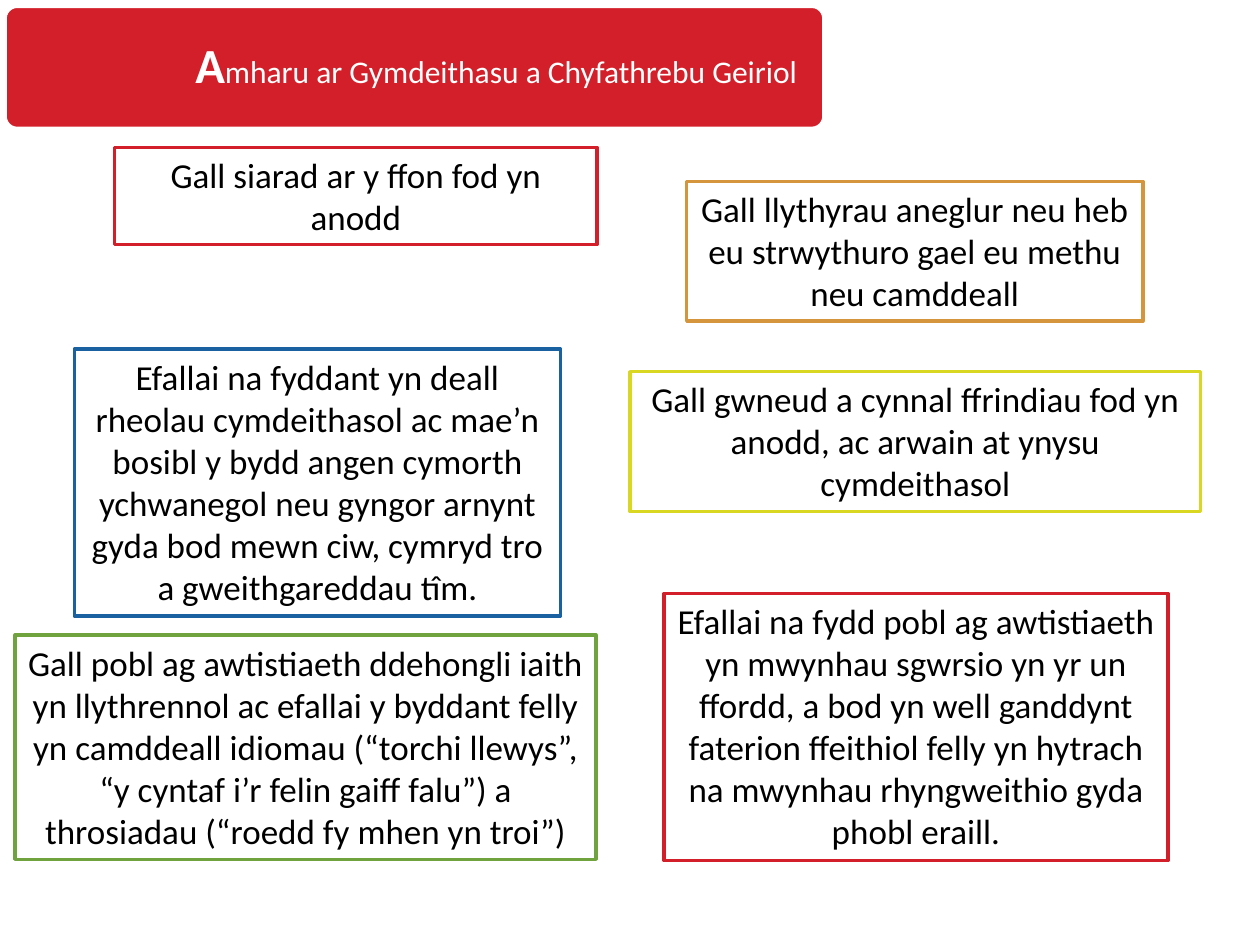
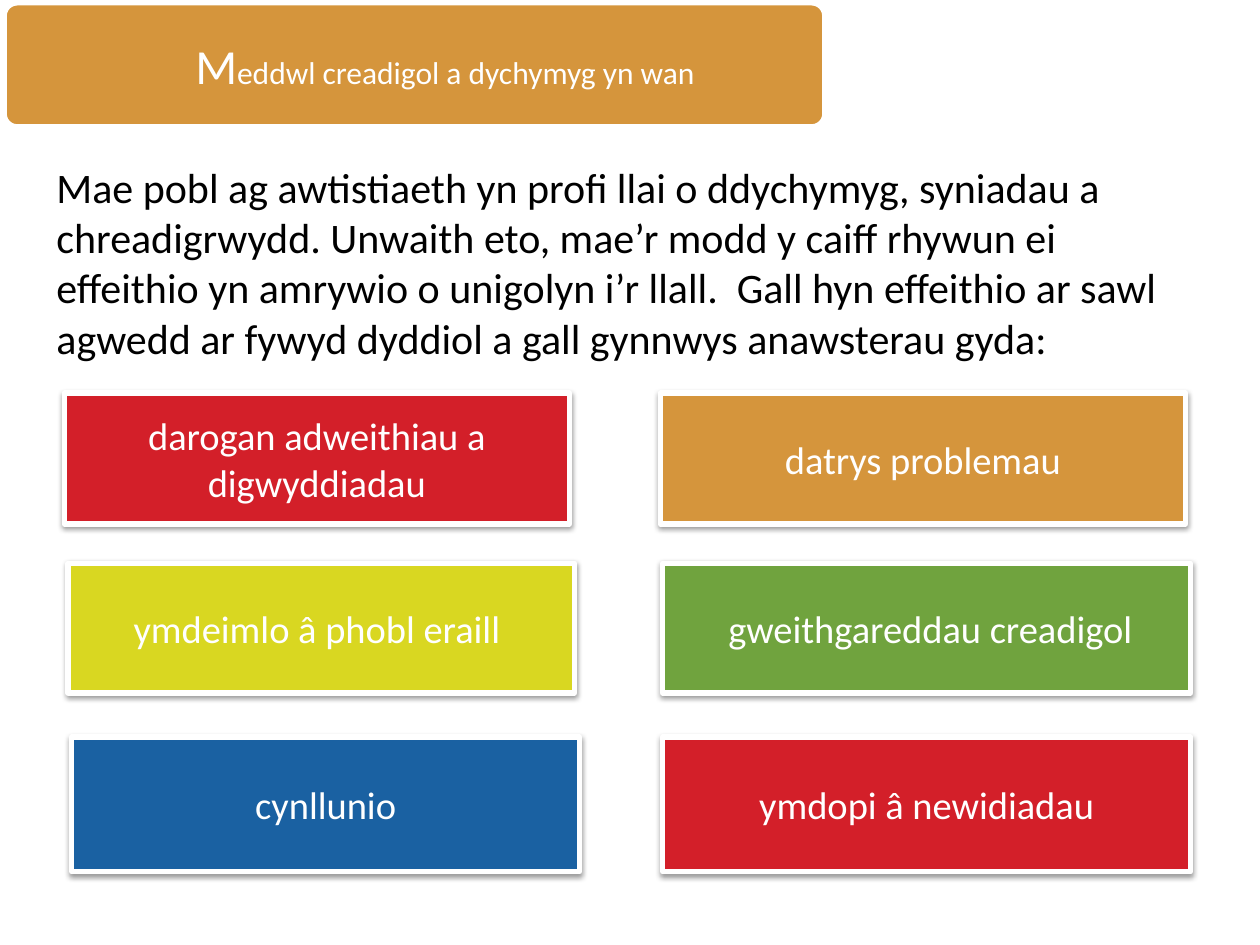
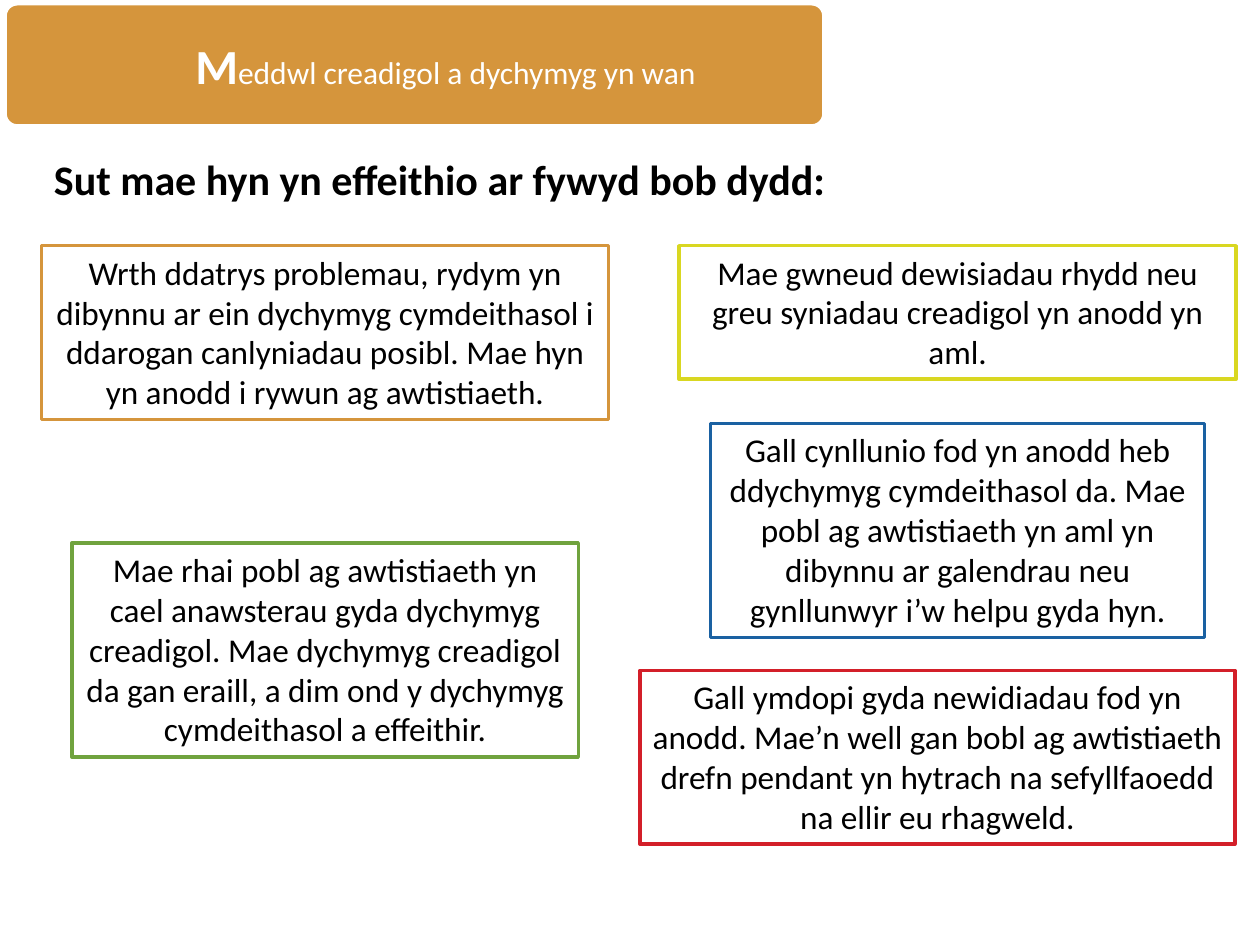
import dataclasses

import lxml.etree
import pptx
import pptx.dml.color
import pptx.enum.shapes
import pptx.enum.text
import pptx.oxml.ns
import pptx.util

Inches = pptx.util.Inches
Pt = pptx.util.Pt
ALIGN = pptx.enum.text.PP_ALIGN
ANCHOR = pptx.enum.text.MSO_ANCHOR
FIT = pptx.enum.text.MSO_AUTO_SIZE
SHAPE = pptx.enum.shapes.MSO_SHAPE


@dataclasses.dataclass(frozen=True)
class Theme:
    red: str = "D31F29"
    orange: str = "D5953C"
    yellow: str = "D9D721"
    green: str = "70A33E"
    blue: str = "1A61A2"
    white: str = "FFFFFF"
    black: str = "000000"
    font: str = "Calibri"
    initial: int = 28
    title: int = 18
    lead: int = 24
    tile: int = 22
    social_note: int = 20
    creative_note: int = 19


@dataclasses.dataclass(frozen=True)
class Box:
    left: float
    top: float
    width: float
    height: float

    def lengths(self):
        return [Inches(side) for side in (self.left, self.top, self.width, self.height)]


THEME = Theme()
CREATIVE_TITLE = "Meddwl creadigol a dychymyg yn wan"


def rgb(colour):
    return pptx.dml.color.RGBColor.from_string(colour)


def style_run(run, size, colour, bold=False):
    run.font.name = THEME.font
    run.font.size = Pt(size)
    run.font.color.rgb = rgb(colour)
    run.font.bold = bold


def write(frame, words, size, colour, align=ALIGN.LEFT, bold=False):
    frame.text = words
    frame.word_wrap = True
    paragraph = frame.paragraphs[0]
    paragraph.alignment = align
    style_run(paragraph.runs[0], size, colour, bold)


def add_panel(slide, box, kind, fill, outline, outline_width):
    panel = slide.shapes.add_shape(kind, *box.lengths())
    panel.shadow.inherit = False
    panel.fill.solid()
    panel.fill.fore_color.rgb = rgb(fill)
    panel.line.color.rgb = rgb(outline)
    panel.line.width = Pt(outline_width)
    return panel


def cast_shadow(panel):
    """Fill the panel's empty effect list with a soft shadow straight below."""
    qn = pptx.oxml.ns.qn
    effects = panel.element.spPr.find(qn("a:effectLst"))
    shadow = lxml.etree.SubElement(
        effects, qn("a:outerShdw"), blurRad=str(Pt(3.1)), dist=str(Pt(1.6)),
        dir="5400000", rotWithShape="0")
    tint = lxml.etree.SubElement(shadow, qn("a:srgbClr"), val=THEME.black)
    lxml.etree.SubElement(tint, qn("a:alpha"), val="38000")


def title_band(slide, box, title, colour, bold_initial=True, line_spacing=1.0):
    """Rounded band whose title opens with a large initial."""
    band = add_panel(slide, box, SHAPE.ROUNDED_RECTANGLE, colour, THEME.white, 2)
    band.adjustments[0] = 0.1

    indent = 1.39
    label = Box(box.left + indent, box.top, box.width - indent, box.height)
    frame = slide.shapes.add_textbox(*label.lengths()).text_frame
    frame.margin_left = frame.margin_right = Inches(0.12)
    frame.margin_top = frame.margin_bottom = Inches(0.12)
    frame.vertical_anchor = ANCHOR.MIDDLE
    write(frame, title[0], THEME.initial, THEME.white, bold=bold_initial)
    paragraph = frame.paragraphs[0]
    paragraph.line_spacing = line_spacing
    rest = paragraph.add_run()
    rest.text = title[1:]
    style_run(rest, THEME.title, THEME.white)


def lead_text(slide, box, words, bold=False, wrap=True):
    frame = slide.shapes.add_textbox(*box.lengths()).text_frame
    write(frame, words, THEME.lead, THEME.black, bold=bold)
    frame.word_wrap = wrap
    frame.auto_size = FIT.SHAPE_TO_FIT_TEXT


def note(slide, box, words, colour, size):
    """White box with a coloured outline and centred text."""
    panel = add_panel(slide, box, SHAPE.RECTANGLE, THEME.white, colour, 2)
    frame = panel.text_frame
    write(frame, words, size, THEME.black, ALIGN.CENTER)
    frame.vertical_anchor = ANCHOR.TOP
    frame.auto_size = FIT.SHAPE_TO_FIT_TEXT


def tile(slide, box, words, colour, indent=None):
    """Coloured box with a shadow; indented text is set from the left."""
    panel = add_panel(slide, box, SHAPE.RECTANGLE, colour, THEME.white, 3)
    cast_shadow(panel)
    frame = panel.text_frame
    frame.vertical_anchor = ANCHOR.MIDDLE
    if indent:
        frame.margin_left = Inches(indent)
    write(frame, words, THEME.tile, THEME.white, ALIGN.LEFT if indent else ALIGN.CENTER)


def social_slide(slide):
    notes = [
        (Box(0.59, 2.77, 3.86, 2.12), THEME.blue,
         "Efallai na fyddant yn deall rheolau cymdeithasol ac mae’n bosibl y bydd angen "
         "cymorth ychwanegol neu gyngor arnynt gyda bod mewn ciw, cymryd tro a "
         "gweithgareddau tîm."),
        (Box(0.12, 5.04, 4.61, 1.78), THEME.green,
         "Gall pobl ag awtistiaeth ddehongli iaith yn llythrennol ac efallai y byddant "
         "felly yn camddeall idiomau (“torchi llewys”, “y cyntaf i’r felin gaiff falu”) "
         "a throsiadau (“roedd fy mhen yn troi”)"),
        (Box(0.91, 1.17, 3.83, 0.77), THEME.red,
         "Gall siarad ar y ffon fod yn anodd"),
        (Box(5.45, 1.44, 3.62, 1.11), THEME.orange,
         "Gall llythyrau aneglur neu heb eu strwythuro gael eu methu neu camddeall"),
        (Box(5, 2.95, 4.53, 1.11), THEME.yellow,
         "Gall gwneud a cynnal ffrindiau fod yn anodd, ac arwain at ynysu cymdeithasol"),
        (Box(5.27, 4.71, 4, 2.12), THEME.red,
         "Efallai na fydd pobl ag awtistiaeth yn mwynhau sgwrsio yn yr un ffordd, a bod "
         "yn well ganddynt faterion ffeithiol felly yn hytrach na mwynhau rhyngweithio "
         "gyda phobl eraill."),
    ]
    for box, colour, words in notes:
        note(slide, box, words, colour, THEME.social_note)
    title_band(slide, Box(0.04, 0.05, 6.5, 0.97),
               "Amharu ar Gymdeithasu a Chyfathrebu Geiriol", THEME.red, line_spacing=0.9)


def difficulties_slide(slide):
    lead_text(slide, Box(0.35, 1.23, 9.3, 1.72),
              "Mae pobl ag awtistiaeth yn profi llai o ddychymyg, syniadau a chreadigrwydd. "
              "Unwaith eto, mae’r modd y caiff rhywun ei effeithio yn amrywio o unigolyn "
              "i’r llall.  Gall hyn effeithio ar sawl agwedd ar fywyd dyddiol a gall "
              "gynnwys anawsterau gyda:")
    # Each row: top, height, text indent, then the left and right tiles
    rows = [
        (3.12, 1.04, None,
         (0.51, 4.01, THEME.red, "darogan adweithiau a digwyddiadau"),
         (5.24, 4.17, THEME.orange, "datrys problemau")),
        (4.47, 1.03, 0.52,
         (0.54, 4.02, THEME.yellow, "ymdeimlo â phobl eraill"),
         (5.26, 4.19, THEME.green, "gweithgareddau creadigol")),
        (5.85, 1.07, None,
         (0.57, 4.03, THEME.blue, "cynllunio"),
         (5.26, 4.19, THEME.red, "ymdopi â newidiadau")),
    ]
    for top, height, indent, *pair in rows:
        for left, width, colour, words in pair:
            tile(slide, Box(left, top, width, height), words, colour, indent)
    title_band(slide, Box(0.04, 0.03, 6.5, 0.97), CREATIVE_TITLE, THEME.orange,
               bold_initial=False)


def daily_life_slide(slide):
    lead_text(slide, Box(0.33, 1.17, 6.39, 0.5),
              "Sut mae hyn yn effeithio ar fywyd bob dydd:", bold=True, wrap=False)
    notes = [
        (Box(5.08, 5.32, 4.72, 1.38), THEME.red,
         "Gall ymdopi gyda newidiadau fod yn anodd. Mae’n well gan bobl ag awtistiaeth "
         "drefn pendant yn hytrach na sefyllfaoedd na ellir eu rhagweld."),
        (Box(0.57, 4.31, 4.02, 1.7), THEME.green,
         "Mae rhai pobl ag awtistiaeth yn cael anawsterau gyda dychymyg creadigol. Mae "
         "dychymyg creadigol da gan eraill, a dim ond y dychymyg cymdeithasol a effeithir."),
        (Box(5.64, 3.36, 3.92, 1.7), THEME.blue,
         "Gall cynllunio fod yn anodd heb ddychymyg cymdeithasol da. Mae pobl ag "
         "awtistiaeth yn aml yn dibynnu ar galendrau neu gynllunwyr i’w helpu gyda hyn."),
        (Box(5.39, 1.95, 4.42, 1.06), THEME.yellow,
         "Mae gwneud dewisiadau rhydd neu greu syniadau creadigol yn anodd yn aml."),
        (Box(0.33, 1.95, 4.5, 1.38), THEME.orange,
         "Wrth ddatrys problemau, rydym yn dibynnu ar ein dychymyg cymdeithasol i "
         "ddarogan canlyniadau posibl. Mae hyn yn anodd i rywun ag awtistiaeth."),
    ]
    for box, colour, words in notes:
        note(slide, box, words, colour, THEME.creative_note)
    title_band(slide, Box(0.04, 0.03, 6.5, 0.97), CREATIVE_TITLE, THEME.orange)


def main():
    deck = pptx.Presentation()
    deck.slide_width = Inches(10)
    deck.slide_height = Inches(7.5)
    blank = deck.slide_layouts[6]
    for build in (social_slide, difficulties_slide, daily_life_slide):
        build(deck.slides.add_slide(blank))
    deck.save("out.pptx")


if __name__ == "__main__":
    main()
